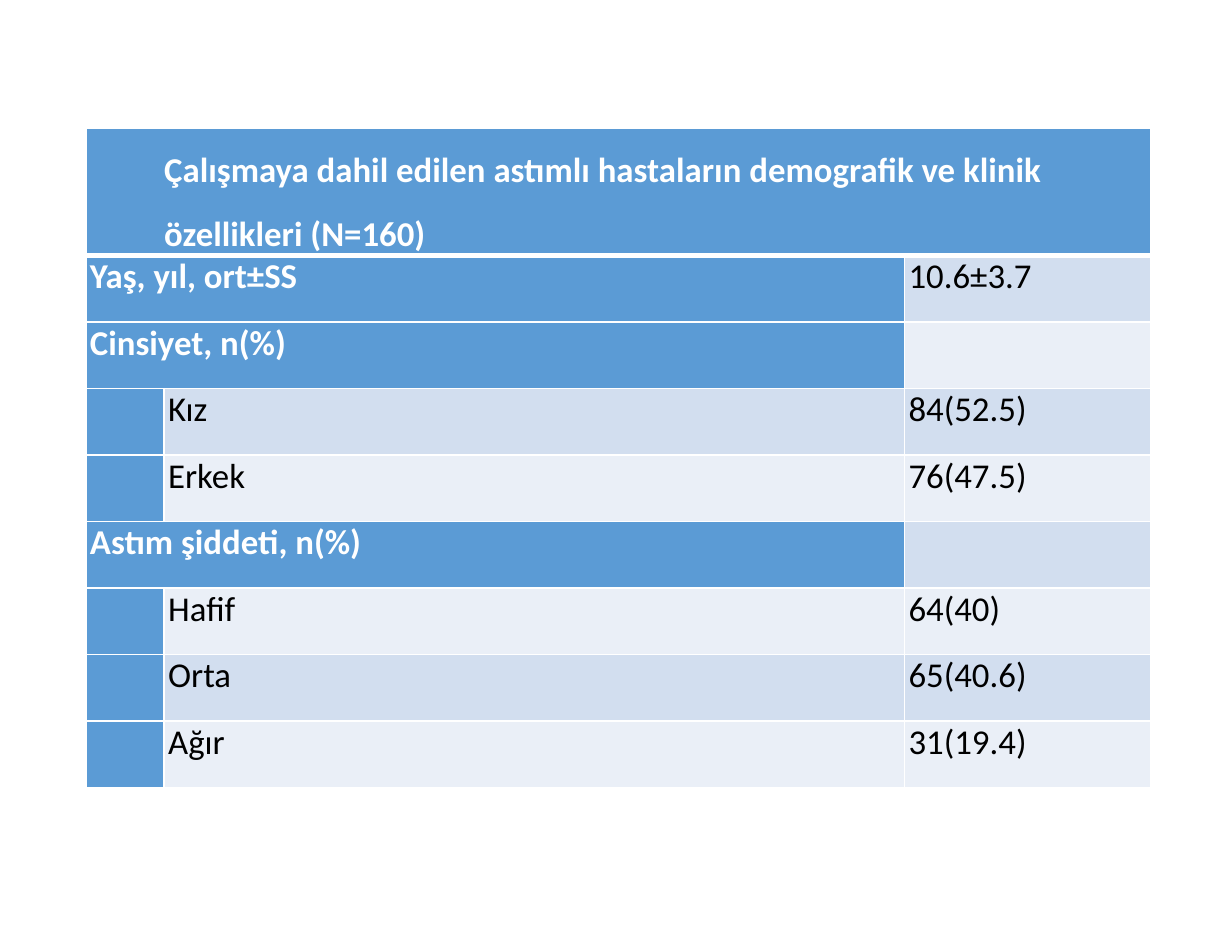
from lxml.etree import SubElement
from pptx import Presentation
from pptx.dml.color import RGBColor
from pptx.enum.text import PP_ALIGN
from pptx.oxml.ns import qn
from pptx.util import Pt

PX = 9525
THEME = {
    "font": "Calibri", "size": Pt(20),
    "heading": "5B9BD5", "bands": ("EAEFF7", "D2DEEF"),
    "heading_text": "FFFFFF", "body_text": "000000", "border": "FFFFFF",
}
TITLE = ("Çalışmaya dahil edilen astımlı hastaların demografik ve klinik\n"
         "özellikleri (N=160)")
# heading across the first two columns, indented label, value
ROWS = [
    (TITLE, "", ""),
    ("Yaş, yıl, ort±SS", "", "10.6±3.7"),
    ("Cinsiyet, n(%)", "", ""),
    ("", "Kız", "84(52.5)"),
    ("", "Erkek", "76(47.5)"),
    ("Astım şiddeti, n(%)", "", ""),
    ("", "Hafif", "64(40)"),
    ("", "Orta", "65(40.6)"),
    ("", "Ağır", "31(19.4)"),
]
COLUMN_WIDTHS = (60, 568, 189)
TITLE_HEIGHT, ROW_HEIGHT = 98, 51


def add_border(cell, side, width):
    line = SubElement(cell._tc.get_or_add_tcPr(), qn(f"a:{side}"), w=str(Pt(width)))
    fill = SubElement(line, qn("a:solidFill"))
    SubElement(fill, qn("a:srgbClr"), val=THEME["border"])


prs = Presentation()
prs.slide_width, prs.slide_height = 945 * PX, 720 * PX
slide = prs.slides.add_slide(prs.slide_layouts[6])

table_height = TITLE_HEIGHT + ROW_HEIGHT * (len(ROWS) - 1)
demographics = slide.shapes.add_table(
    len(ROWS), len(COLUMN_WIDTHS), 66 * PX, 98 * PX,
    sum(COLUMN_WIDTHS) * PX, table_height * PX).table
demographics.first_row = demographics.horz_banding = False
for column, width in zip(demographics.columns, COLUMN_WIDTHS):
    column.width = width * PX

for r, row in enumerate(ROWS):
    is_title = r == 0
    demographics.rows[r].height = (TITLE_HEIGHT if is_title else ROW_HEIGHT) * PX
    for c, text in enumerate(row):
        cell = demographics.cell(r, c)
        is_heading = is_title or c == 0 or bool(row[0]) and c == 1
        cell.margin_left = cell.margin_right = 3 * PX
        cell.margin_top = cell.margin_bottom = 0
        for side in ("lnL", "lnR", "lnT", "lnB"):
            under_title = (r, side) in ((0, "lnB"), (1, "lnT"))
            add_border(cell, side, 3 if under_title else 1)
        cell.fill.solid()
        cell.fill.fore_color.rgb = RGBColor.from_string(
            THEME["heading"] if is_heading else THEME["bands"][r % 2])
        cell.text = text
        for paragraph in cell.text_frame.paragraphs:
            paragraph.font.name = THEME["font"]
            paragraph.font.size = THEME["size"]
            paragraph.font.bold = is_heading
            paragraph.font.color.rgb = RGBColor.from_string(
                THEME["heading_text" if is_heading else "body_text"])
            if is_title:
                paragraph.alignment = PP_ALIGN.JUSTIFY
                paragraph.line_spacing = 1.5
                paragraph._p.get_or_add_pPr().set("indent", str(57 * PX))
    if row[0]:
        demographics.cell(r, 0).merge(demographics.cell(r, 2 if is_title else 1))

prs.save("out.pptx")
